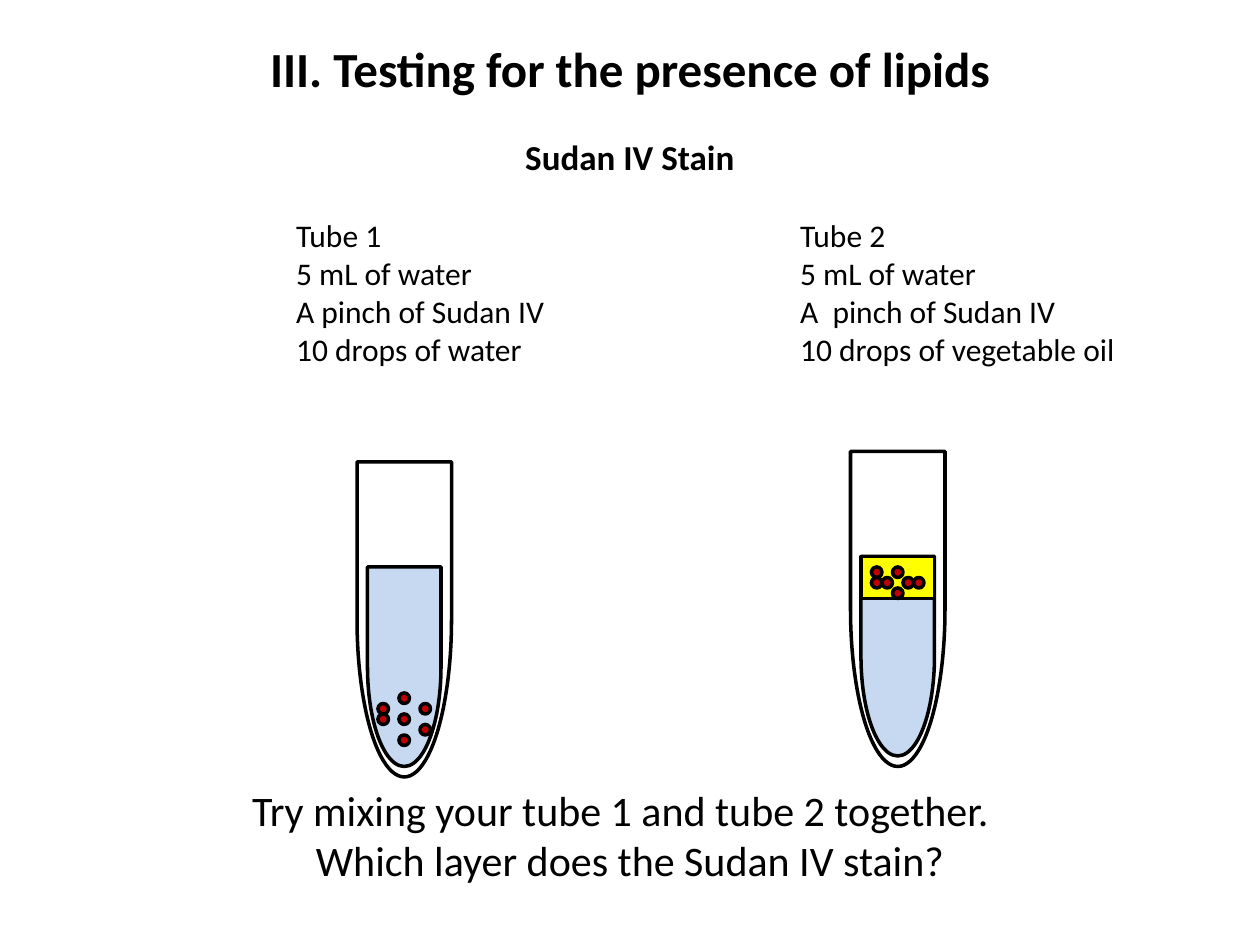
from dataclasses import dataclass

from lxml import etree
from pptx import Presentation
from pptx.dml.color import RGBColor
from pptx.enum import shapes, text
from pptx.oxml import ns
from pptx import util as u

PX = u.Inches(1) // 120


@dataclass(frozen=True)
class Theme:
    """Colours, font and type sizes of the slide."""
    font: str = "Calibri"
    ink: RGBColor = RGBColor(0, 0, 0)
    water: RGBColor = RGBColor(0xC6, 0xD9, 0xF1)
    oil: RGBColor = RGBColor(0xFF, 0xFF, 0)
    stain: RGBColor = RGBColor(0xC0, 0, 0)
    title: int = 28
    subtitle: int = 20
    recipe: int = 18
    question: int = 24
    outline: int = 2


THEME = Theme()
RECIPES = (
    ("Tube 1", "5 mL of water", "A pinch of Sudan IV", "10 drops of water"),
    ("Tube 2", "5 mL of water", "A  pinch of Sudan IV", "10 drops of vegetable oil"),
)
SUNK_GRAINS = ((40, 220), (20, 230), (60, 230), (20, 240), (40, 240), (60, 250), (40, 260))
OIL_GRAINS = ((20, 110), (40, 110), (20, 120), (30, 120), (50, 120), (60, 120), (40, 130))


def place(item, left, top, width, height):
    """Move and size an item in px."""
    item.left, item.top = left * PX, top * PX
    item.width, item.height = width * PX, height * PX


def write_lines(holder, lines, size, bold=False, align=text.PP_ALIGN.CENTER):
    """Fill a text holder with unbulleted lines set from its top."""
    frame = holder.text_frame
    frame.word_wrap = True
    frame.auto_size = text.MSO_AUTO_SIZE.NONE
    frame.vertical_anchor = text.MSO_ANCHOR.TOP
    for index, line in enumerate(lines):
        paragraph = frame.add_paragraph() if index else frame.paragraphs[0]
        paragraph.alignment = align
        paragraph.space_before = u.Pt(0)
        props = paragraph._p.get_or_add_pPr()
        props.set("marL", "0")
        props.set("indent", "0")
        etree.SubElement(props, ns.qn("a:buNone"))
        run = paragraph.add_run()
        run.text = line
        run.font.name, run.font.size, run.font.bold = THEME.font, u.Pt(size), bold
        run.font.color.rgb = THEME.ink


def add_centred(slide, box, lines, size, bold=False):
    """Add a text box of centred lines."""
    holder = slide.shapes.add_textbox(*(side * PX for side in box))
    write_lines(holder, lines, size, bold)


def add_outlined(slide, kind, box, fill=None):
    """Add a black-outlined shape, hollow unless a fill is given."""
    outlined = slide.shapes.add_shape(kind, *(side * PX for side in box))
    outlined.shadow.inherit = False
    outlined.line.color.rgb = THEME.ink
    outlined.line.width = u.Pt(THEME.outline)
    if fill is None:
        outlined.fill.background()
    else:
        outlined.fill.solid()
        outlined.fill.fore_color.rgb = fill
    return outlined


def add_vessel(slide, box, fill=None):
    """Add an upright round-bottomed vessel that fills the box."""
    left, top, width, height = box
    shift = (height - width) // 2
    vessel = add_outlined(slide, shapes.MSO_SHAPE.FLOWCHART_DELAY,
                          (left - shift, top + shift, height, width), fill)
    vessel.rotation = 90


def add_tube(slide, left, top, grains, has_oil=False):
    """Draw a test tube with water, an optional oil layer and stain grains."""
    add_vessel(slide, (left, top, 90, 300))
    add_vessel(slide, (left + 10, top + 100, 70, 190), THEME.water)
    if has_oil:
        add_outlined(slide, shapes.MSO_SHAPE.RECTANGLE,
                     (left + 10, top + 100, 70, 40), THEME.oil)
    for x, y in grains:
        add_outlined(slide, shapes.MSO_SHAPE.FLOWCHART_CONNECTOR,
                     (left + x, top + y, 10, 10), THEME.stain)


def build():
    """Build and save the lipid test slide."""
    deck = Presentation()
    deck.slide_width, deck.slide_height = 1200 * PX, 900 * PX
    slide = deck.slides.add_slide(deck.slide_layouts.get_by_name("Two Content"))
    heading, *recipe_lists = list(slide.placeholders)[:3]

    place(heading, 30, 31, 1140, 70)
    write_lines(heading, ["III. Testing for the presence of lipids"], THEME.title, True)
    add_centred(slide, (30, 123, 1140, 54), ["Sudan IV Stain"], THEME.subtitle, True)
    for recipe_list, recipe, left in zip(recipe_lists, RECIPES, (270, 750)):
        place(recipe_list, left, 200, 400, 160)
        write_lines(recipe_list, recipe, THEME.recipe, align=text.PP_ALIGN.LEFT)

    add_tube(slide, 340, 440, SUNK_GRAINS)
    add_tube(slide, 810, 430, OIL_GRAINS, has_oil=True)
    add_centred(slide, (30, 741, 1140, 112),
                ["Try mixing your tube 1 and tube 2 together.  ",
                 "Which layer does the Sudan IV stain?"], THEME.question)
    deck.save("out.pptx")


if __name__ == "__main__":
    build()
